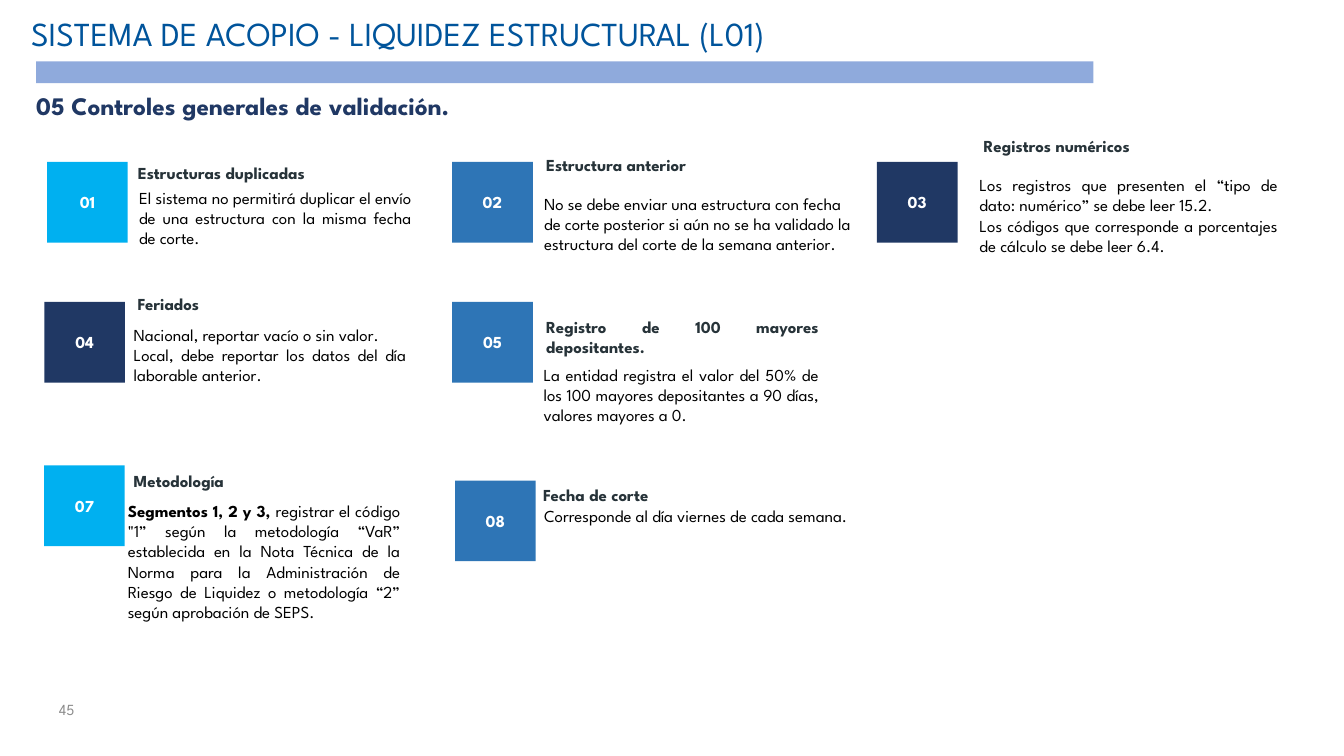
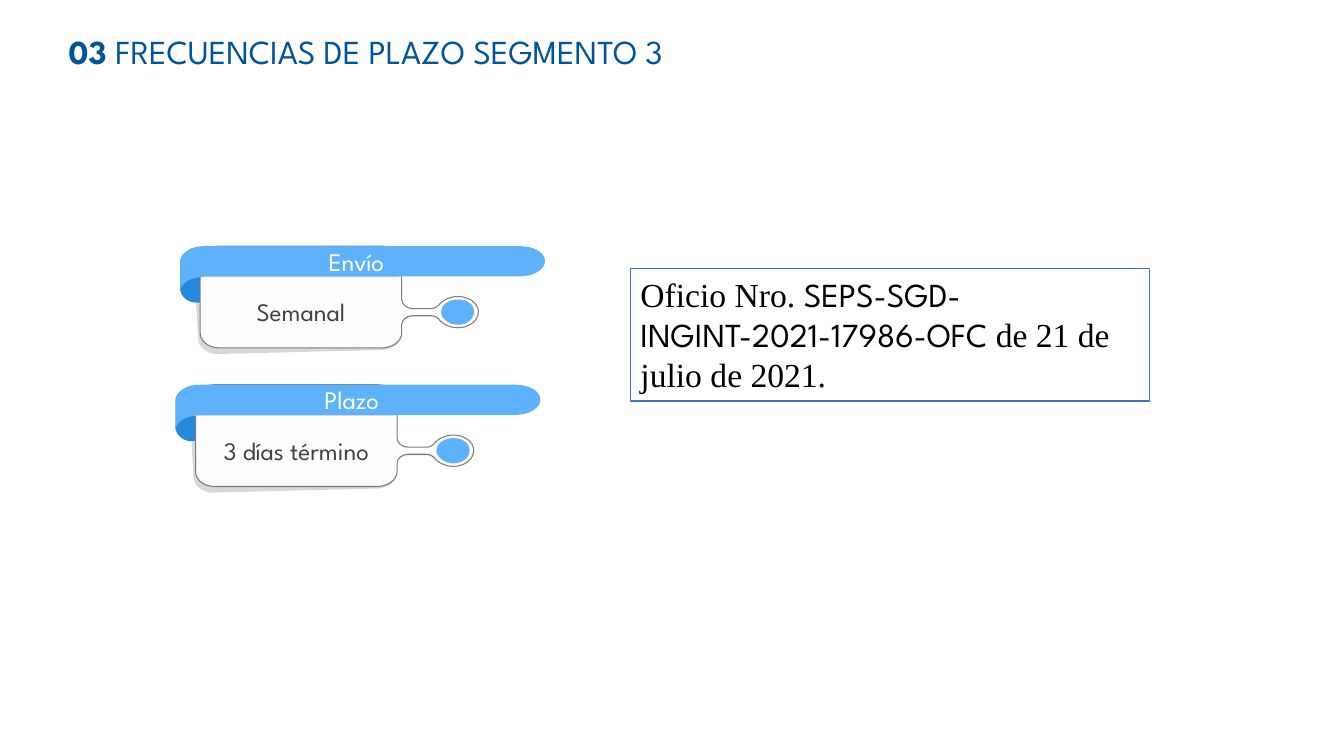
import pptx
import pptx.util
import pptx.dml.color
import pptx.enum.shapes
import pptx.enum.text
import pptx.oxml.ns
import lxml.etree

Pt = pptx.util.Pt
RGBColor = pptx.dml.color.RGBColor
Align = pptx.enum.text.PP_ALIGN
Anchor = pptx.enum.text.MSO_ANCHOR
Preset = pptx.enum.shapes.MSO_SHAPE
qn = pptx.oxml.ns.qn

TITLE_BLUE = RGBColor(0x00, 0x54, 0x9B)
NAVY = RGBColor(0x20, 0x38, 0x64)
BLUE = RGBColor(0x2E, 0x75, 0xB6)
CYAN = RGBColor(0x00, 0xB0, 0xF0)
BAND = RGBColor(0x8F, 0xAA, 0xDC)
HEADING = RGBColor(0x27, 0x33, 0x39)
BLACK = RGBColor(0, 0, 0)
WHITE = RGBColor(0xFF, 0xFF, 0xFF)
PAGE_GREY = RGBColor(0x8C, 0x8C, 0x8C)
RIBBON = RGBColor(0x5E, 0xB2, 0xFC)
FOLD = RGBColor(0x26, 0x89, 0xE0)
CARD = RGBColor(0xFD, 0xFD, 0xFD)
CARD_LINE = RGBColor(0x7C, 0x7C, 0x7C)
CARD_TEXT = RGBColor(0x43, 0x43, 0x43)
SHADE = RGBColor(0xB7, 0xB7, 0xB7)
FRAME = RGBColor(0x44, 0x72, 0xC4)
SPARTAN = "League Spartan"
SERIF = "Times New Roman"


def write(holder, *paragraphs, size=12, color=BLACK, bold=False, font=SPARTAN,
          align=Align.LEFT, anchor=Anchor.TOP, insets=(7.2, 3.6, 7.2, 3.6)):
    frame = holder.text_frame
    frame.auto_size = pptx.enum.text.MSO_AUTO_SIZE.NONE
    frame.word_wrap = True
    frame.vertical_anchor = anchor
    frame.margin_left, frame.margin_top, frame.margin_right, frame.margin_bottom = map(Pt, insets)
    for index, content in enumerate(paragraphs):
        paragraph = frame.add_paragraph() if index else frame.paragraphs[0]
        paragraph.alignment = align
        for text, changes in [(content, {})] if isinstance(content, str) else content:
            run = paragraph.add_run()
            run.text = text
            run.font.size = Pt(size)
            run.font.color.rgb = color
            run.font.bold = changes.get("bold", bold)
            run.font.name = changes.get("font", font)


def paint(shape, fill, line=None, width=0.75, opacity=None):
    shape.shadow.inherit = False
    shape.fill.solid()
    shape.fill.fore_color.rgb = fill
    if opacity:
        tint = shape.fill._xPr.find(".//" + qn("a:srgbClr"))
        lxml.etree.SubElement(tint, qn("a:alpha"), val=str(opacity * 1000))
    if line:
        shape.line.color.rgb = line
        shape.line.width = Pt(width)
    else:
        shape.line.fill.background()


deck = pptx.Presentation()
deck.slide_width, deck.slide_height = Pt(960), Pt(540)

PLAIN = (0, 0, 9.4, 0)
titles = [
    ("SISTEMA DE ACOPIO - LIQUIDEZ ESTRUCTURAL (L01)", (15, 5.8, 670, 36), (7.2, 3.6, 7.2, 3.6)),
    ([("03 ", {"bold": True}), ("FRECUENCIAS DE PLAZO SEGMENTO 3", {})], (49, 22, 618.5, 40), PLAIN),
]
slides = []
for content, place, insets in titles:
    slide = deck.slides.add_slide(deck.slide_layouts[5])
    title = slide.shapes.title
    title.left, title.top, title.width, title.height = map(Pt, place)
    write(title, content, size=24, color=TITLE_BLUE, insets=insets)
    slides.append(slide)
validation, deadlines = [slide.shapes for slide in slides]

page = validation.add_textbox(Pt(25.9), Pt(491), Pt(34.5), Pt(31))
write(page, "45", size=11, color=PAGE_GREY, align=Align.RIGHT, anchor=Anchor.MIDDLE)
section = validation.add_textbox(Pt(25.9), Pt(64.8), Pt(557), Pt(40))
write(section, "05 Controles generales de validación.", size=18, color=NAVY, bold=True, insets=PLAIN)
band = validation.add_shape(Preset.RECTANGLE, Pt(25.8), Pt(43.8), Pt(755.3), Pt(15.6))
paint(band, BAND)

BADGE = 57.6
controls = [
    ("01", CYAN, (33.7, 115.7), "Estructuras duplicadas", (91.4, 113, 220, 21.6),
     (92.2, 130.3, 209, 51), Align.JUSTIFY,
     ["El sistema no permitirá duplicar el envío de una estructura con la misma fecha de corte."]),
    ("02", BLUE, (323, 115.7), "Estructura anterior", (383, 107.3, 209, 21.6),
     (381.6, 134.6, 236, 65.5), Align.LEFT,
     ["No se debe enviar una estructura con fecha de corte posterior si aún no se ha validado "
      "la estructura del corte de la semana anterior."]),
    ("03", NAVY, (626.4, 115.7), "Registros numéricos", (695.5, 93.6, 209, 21.6),
     (692.6, 121.5, 227.5, 94.3), Align.JUSTIFY,
     ["Los registros que presenten el “tipo de dato: numérico” se debe leer 15.2.",
      "Los códigos que corresponde a porcentajes de cálculo se debe leer 6.4."]),
    ("04", NAVY, (31.7, 215.7), "Feriados", (91.2, 206.6, 209, 21.6),
     (88.4, 228.2, 209, 65.5), Align.JUSTIFY,
     ["Nacional, reportar vacío o sin valor.",
      "Local, debe reportar los datos del día laborable anterior."]),
    ("05", BLUE, (323, 215.7), "Registro de 100 mayores depositantes.", (383, 222.5, 209, 36),
     (381.2, 257, 211, 65.5), Align.JUSTIFY,
     ["La entidad registra el valor del 50% de los 100 mayores depositantes a 90 días, "
      "valores mayores a 0."]),
    ("07", CYAN, (31.5, 332.5), "Metodología", (88.4, 332.6, 209, 21.6),
     (84.2, 354.2, 209, 123.8), Align.JUSTIFY,
     [[("Segmentos 1, 2 y 3, ", {"bold": True}),
       ("registrar el código \"1” según la metodología “VaR” establecida en la Nota Técnica "
        "de la Norma para la Administración de Riesgo de Liquidez o metodología “2” según "
        "aprobación de SEPS.", {})]]),
    ("08", BLUE, (325.1, 343.3), "Fecha de corte", (380.8, 342.7, 209, 21.6),
     (381.6, 357.8, 256.3, 36), Align.JUSTIFY,
     ["Corresponde al día viernes de cada semana."]),
]
for number, fill, corner, heading, heading_place, rule_place, align, rule in controls:
    badge = validation.add_shape(Preset.RECTANGLE, *map(Pt, corner), Pt(BADGE), Pt(BADGE))
    paint(badge, fill)
    write(badge, number, color=WHITE, bold=True, align=Align.CENTER, anchor=Anchor.MIDDLE)
    write(validation.add_textbox(*map(Pt, rule_place)), *rule, align=align)
    write(validation.add_textbox(*map(Pt, heading_place)), heading,
          color=HEADING, bold=True, align=Align.JUSTIFY)

UNIT = 0.72
card_shade = [
    (197, 2), (33, 6), (23, 6, 14, 13, 14, 21), (18, 92), (18, 100, 27, 107, 37, 107),
    (201, 103), (212, 102, 220, 96, 220, 87), (219, 79), (219, 75, 224, 71, 230, 70),
    (249, 70), (253, 70, 256, 72, 258, 74), (262, 78, 268, 81, 276, 81),
    (288, 81, 297, 74, 296, 65), (296, 56, 287, 50, 276, 50), (267, 50, 261, 53, 258, 58),
    (256, 60, 252, 62, 248, 62), (230, 63), (224, 63, 219, 59, 218, 54), (217, 16),
    (216, 8, 208, 2, 197, 2),
]
fold = [
    (16, 28), (12, 28, 8, 29, 5, 32), (2, 34, 0, 38, 0, 42), (0, 49, 7, 56, 16, 56),
    (25, 56), (25, 28),
]
card = [
    (39, 0), (28, 0, 20, 6, 20, 15), (20, 86), (20, 94, 28, 101, 39, 101), (200, 101),
    (211, 101, 220, 94, 220, 86), (220, 78), (220, 73, 225, 69, 231, 69), (249, 69),
    (253, 69, 256, 71, 258, 74), (262, 78, 268, 81, 276, 81), (287, 81, 296, 74, 296, 65),
    (296, 57, 287, 50, 276, 50), (268, 50, 262, 53, 258, 57), (256, 60, 253, 62, 249, 62),
    (231, 62), (225, 62, 220, 58, 220, 53), (220, 15), (220, 6, 211, 0, 200, 0),
]
dot = [
    (276, 53), (267, 53, 259, 58, 259, 65), (259, 72, 267, 78, 276, 78),
    (285, 78, 292, 72, 292, 65), (292, 58, 285, 53, 276, 53),
]
ribbon_shade = [
    (17, 3), (12, 3, 8, 5, 5, 7), (2, 10, 0, 13, 0, 17), (0, 43), (1, 40, 2, 37, 5, 35),
    (8, 33, 12, 31, 17, 31), (213, 31), (222, 31, 229, 25, 229, 17), (228, 8, 221, 3, 213, 3),
]
ribbon = [
    (26, 0), (19, 0, 12, 1, 8, 4), (3, 7, 0, 11, 0, 15), (0, 45), (0, 41, 3, 37, 8, 34),
    (12, 32, 19, 30, 26, 30), (337, 30), (351, 30, 362, 23, 362, 15), (362, 6, 351, 0, 337, 0),
]
layers = [
    (card_shade, {"fill": SHADE, "opacity": 55}),
    (fold, {"fill": FOLD}),
    (card, {"fill": CARD, "line": CARD_LINE}),
    (dot, {"fill": RIBBON}),
    (ribbon_shade, {"fill": SHADE, "opacity": 55}),
    (ribbon, {"fill": RIBBON}),
]
labels = [("Plazo", "3 días término", 125.3, 274.8), ("Envío", "Semanal", 128.6, 175.8)]
for heading, term, left, top in labels:
    tag = deadlines.add_group_shape().shapes
    for outline, style in layers:
        segments = [[(Pt(left + x * UNIT), Pt(top + y * UNIT))
                     for x, y in zip(segment[::2], segment[1::2])] for segment in outline]
        builder = tag.build_freeform(*segments[0][0])
        builder.add_line_segments([segment[-1] for segment in segments[1:]], close=True)
        piece = builder.convert_to_shape()
        for side, segment in zip(list(piece._element.iter(qn("a:lnTo"))), segments[1:]):
            if len(segment) == 3:
                curve = lxml.etree.Element(qn("a:cubicBezTo"))
                for x, y in segment:
                    lxml.etree.SubElement(curve, qn("a:pt"), x=str(x - piece.left), y=str(y - piece.top))
                side.getparent().replace(side, curve)
        paint(piece, **style)
    for text, color, x, y, width, height in [
        (term, CARD_TEXT, 15.1, 26, 142.5, 41.8),
        (heading, WHITE, 14.4, 0, 223, 21.6),
    ]:
        caption = tag.add_textbox(Pt(left + x), Pt(top + y), Pt(width), Pt(height))
        write(caption, text, size=18, color=color, align=Align.CENTER,
              anchor=Anchor.MIDDLE, insets=(7.2, 7.2, 7.2, 7.2))

notice = deadlines.add_shape(Preset.RECTANGLE, Pt(450.4), Pt(192), Pt(370.8), Pt(94.5))
paint(notice, WHITE, line=FRAME, width=1)
write(notice, [("Oficio Nro. ", {}),
               ("SEPS-SGD-INGINT-2021-17986-OFC ", {"font": SPARTAN}),
               ("de 21 de julio de 2021.", {})], size=24, font=SERIF)

deck.save("out.pptx")
